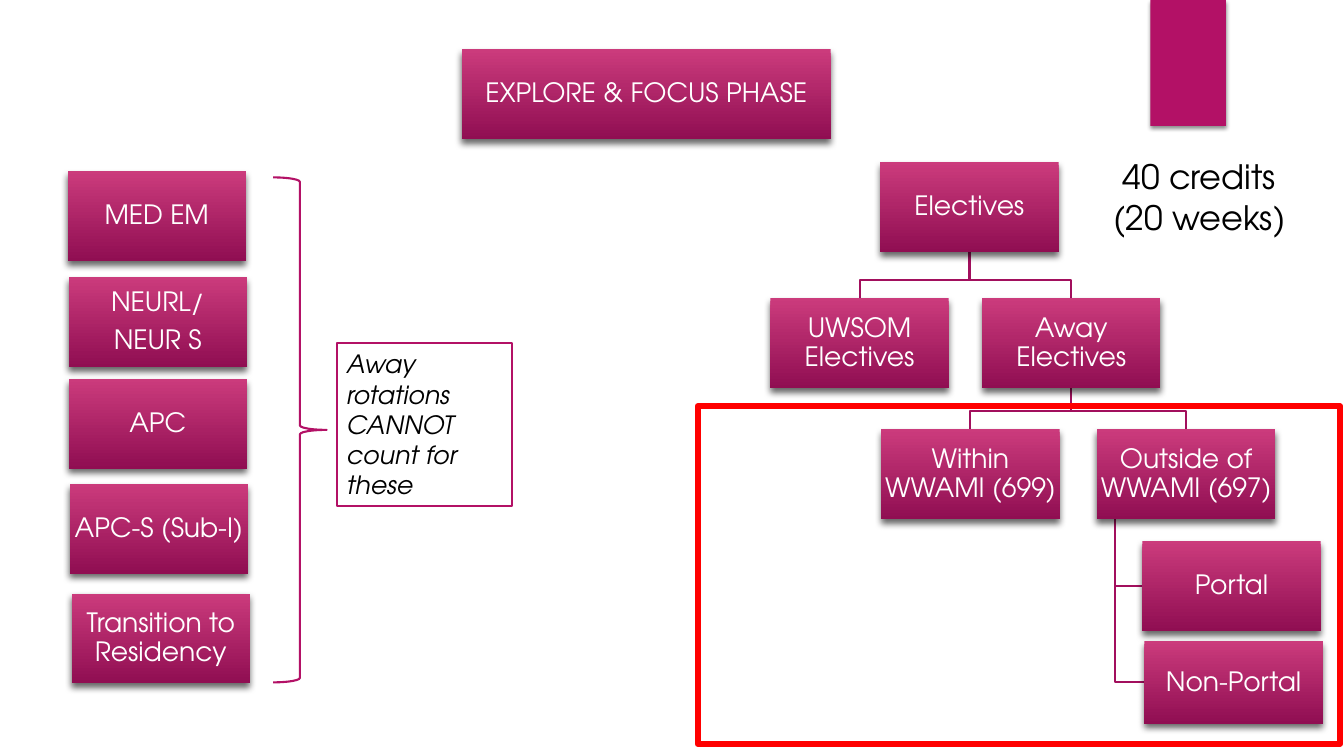
from lxml import etree
from pptx import Presentation, util as u
from pptx.dml.color import RGBColor
from pptx.enum import shapes, text
from pptx.oxml.ns import qn

FONT = "TeX Gyre Adventor"
MAGENTA = "B31166"
BOX_W, BOX_H = 1.77, 0.89


def color(hex_string):
    return RGBColor.from_string(hex_string)


def add_shadow(shape, opacity, blur, distance):
    effects = shape._element.spPr.find(qn("a:effectLst"))
    shadow = etree.SubElement(effects, qn("a:outerShdw"), blurRad=str(u.Pt(blur)),
                              dist=str(u.Pt(distance)), dir="5400000", rotWithShape="0")
    black = etree.SubElement(shadow, qn("a:srgbClr"), val="000000")
    etree.SubElement(black, qn("a:alpha"), val=str(opacity * 1000))


def add_preset(slide, preset, box, fill=None, line=None, width=1.5):
    shape = slide.shapes.add_shape(preset, *map(u.Inches, box))
    shape.shadow.inherit = False
    if fill:
        shape.fill.solid()
        shape.fill.fore_color.rgb = color(fill)
    else:
        shape.fill.background()
    if line:
        shape.line.color.rgb = color(line)
        shape.line.width = u.Pt(width)
    else:
        shape.line.fill.background()
    return shape


def write(shape, words, size, ink, align, italic=False):
    frame = shape.text_frame
    frame.word_wrap = True
    frame.text = words
    for paragraph in frame.paragraphs:
        paragraph.alignment = align
        for run in paragraph.runs:
            run.font.name = FONT
            run.font.size = u.Pt(size)
            run.font.italic = italic
            run.font.color.rgb = color(ink)
    return frame


def add_box(slide, words, left, top, width=BOX_W, height=BOX_H):
    shape = add_preset(slide, shapes.MSO_SHAPE.RECTANGLE, (left, top, width, height))
    shape.fill.gradient()
    shape.fill.gradient_angle = 270
    for stop, hex_string, position in zip(shape.fill.gradient_stops, ("CB3B7C", "900E52"), (0, 1)):
        stop.color.rgb = color(hex_string)
        stop.position = position
    add_shadow(shape, 60, 5, 3)
    frame = write(shape, words, 19, "FFFFFF", text.PP_ALIGN.CENTER)
    frame.vertical_anchor = text.MSO_ANCHOR.MIDDLE
    frame.margin_left = frame.margin_right = u.Inches(0.01)
    frame.margin_top = frame.margin_bottom = u.Inches(0.01)
    for paragraph in frame.paragraphs:
        paragraph.line_spacing = 0.9
        paragraph.space_after = u.Pt(7)


def add_branch(slide, points):
    corners = [(u.Inches(x), u.Inches(y)) for x, y in points]
    builder = slide.shapes.build_freeform(*corners[0])
    builder.add_line_segments(corners[1:], close=False)
    branch = builder.convert_to_shape()
    branch.shadow.inherit = False
    branch.fill.background()
    branch.line.color.rgb = color("A20F5D")
    branch.line.width = u.Pt(1.5)


def add_fork(slide, parent, children):
    x, y = parent[0] + BOX_W / 2, parent[1] + BOX_H
    for left, top in children:
        middle = left + BOX_W / 2
        add_branch(slide, [(x, y), (x, top - 0.18), (middle, top - 0.18), (middle, top)])


def add_required(slide, left, top):
    clerkships = [
        ("MED EM", 0, 0),
        ("NEURL/\nNEUR S", 0.01, 1.05),
        ("APC", 0.01, 2.06),
        ("APC-S (Sub-I)", 0.02, 3.1),
        ("Transition to Residency", 0.04, 4.19),
    ]
    for words, dx, dy in clerkships:
        add_box(slide, words, left + dx, top + dy)
    note = add_preset(slide, shapes.MSO_SHAPE.RECTANGLE,
                      (left + 2.67, top + 1.7, 1.74, 1.62), "FFFFFF", MAGENTA)
    write(note, "Away rotations CANNOT count for\nthese", 18, "000000",
          text.PP_ALIGN.LEFT, italic=True)
    add_preset(slide, shapes.MSO_SHAPE.RIGHT_BRACE,
               (left + 2.04, top + 0.06, 0.53, 5.01), line=MAGENTA)


def add_electives(slide, left, top):
    electives = (left + 1.09, top)
    school, away = (left, top + 1.35), (left + 2.1, top + 1.35)
    within, outside = (left + 1.1, top + 2.65), (left + 3.24, top + 2.65)
    service, direct = (left + 3.69, top + 3.76), (left + 3.71, top + 4.75)
    trunk = outside[0] + 0.18
    for (x, y), height in ((service, BOX_H), (direct, 0.82)):
        middle = y + height / 2
        add_branch(slide, [(trunk, outside[1] + BOX_H), (trunk, middle), (x, middle)])
    add_fork(slide, away, (within, outside))
    add_fork(slide, electives, (school, away))
    for words, place in (
        ("Electives", electives),
        ("UWSOM Electives", school),
        ("Away Electives", away),
        ("Within WWAMI (699)", within),
        ("Outside of WWAMI (697)", outside),
        ("Portal", service),
    ):
        add_box(slide, words, *place)
    add_box(slide, "Non-Portal", *direct, height=0.82)
    add_preset(slide, shapes.MSO_SHAPE.RECTANGLE,
               (left - 0.72, top + 2.42, 6.37, 3.35), line="FF0000", width=4.5)
    credits = slide.shapes.add_textbox(*map(u.Inches, (left + 2.76, top - 0.11, 2.99, 0.91)))
    write(credits, "40 credits\n(20 weeks)", 24, "000000", text.PP_ALIGN.CENTER)


def main():
    presentation = Presentation()
    presentation.slide_width = u.Inches(13.33)
    presentation.slide_height = u.Inches(7.5)
    slide = presentation.slides.add_slide(presentation.slide_layouts[6])
    tab = add_preset(slide, shapes.MSO_SHAPE.RECTANGLE, (11.41, 0, 0.75, 1.25), MAGENTA)
    add_shadow(tab, 45, 3, 2)
    add_box(slide, "EXPLORE & FOCUS PHASE", 4.58, 0.49, width=3.66)
    add_required(slide, 0.67, 1.7)
    add_electives(slide, 7.64, 1.61)
    presentation.save("out.pptx")


if __name__ == "__main__":
    main()
